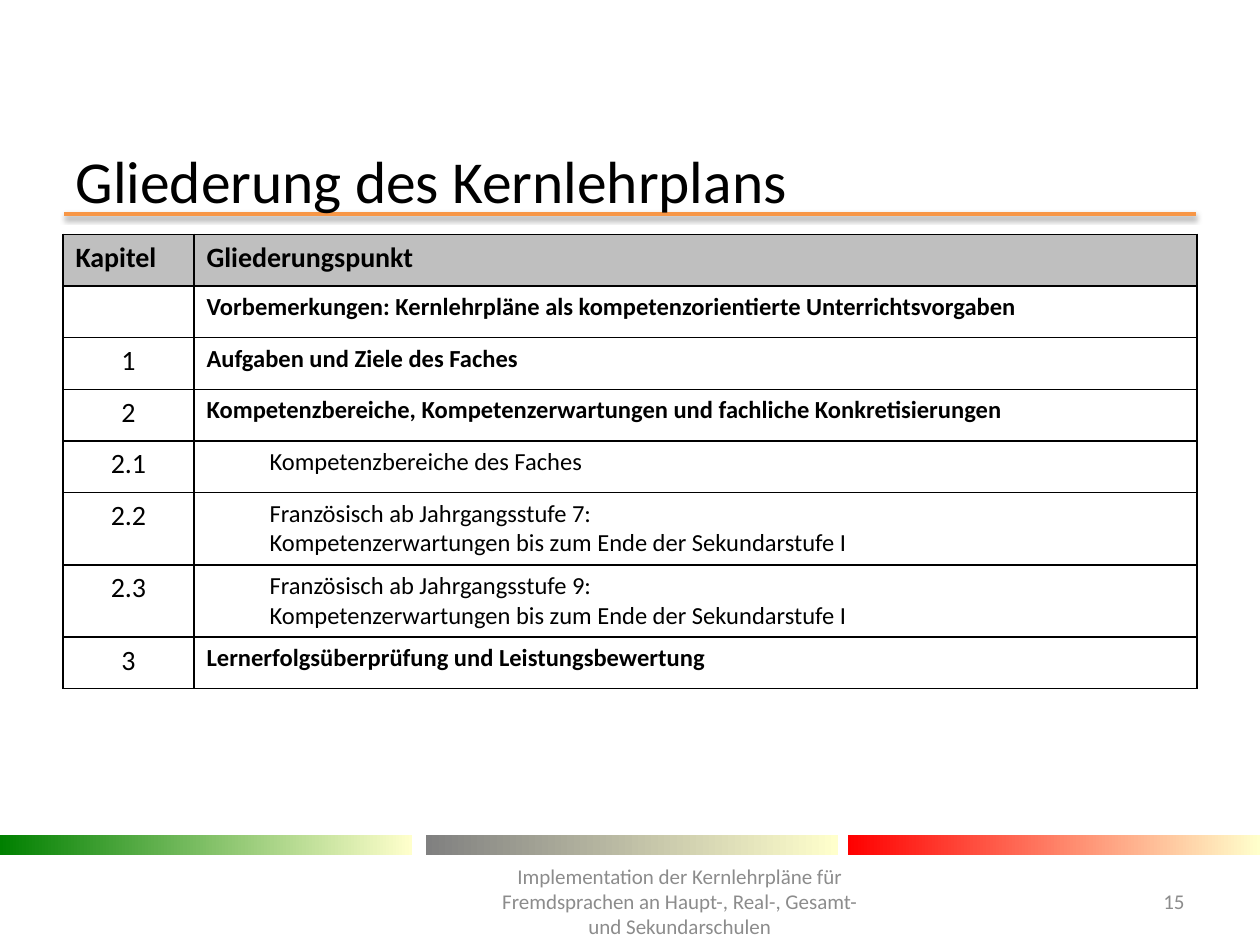
import pptx
import pptx.dml.color
import pptx.enum.shapes
import pptx.enum.text
import pptx.oxml
import pptx.oxml.ns
import pptx.util
from typing import NamedTuple

Inches = pptx.util.Inches
Pt = pptx.util.Pt
ALIGN = pptx.enum.text.PP_ALIGN
MIDDLE = pptx.enum.text.MSO_ANCHOR.MIDDLE
NS = pptx.oxml.ns.nsdecls("a")


class Chapter(NamedTuple):
    number: str
    heading: str
    is_section: bool = False


class Band(NamedTuple):
    left: float
    start: str
    end: str


class FooterText(NamedTuple):
    left: float
    width: float
    text: str
    align: ALIGN


CHAPTERS = [
    Chapter("", "Vorbemerkungen: Kernlehrpläne als kompetenzorientierte Unterrichtsvorgaben"),
    Chapter("1", "Aufgaben und Ziele des Faches"),
    Chapter("2", "Kompetenzbereiche, Kompetenzerwartungen und fachliche Konkretisierungen"),
    Chapter("2.1", "Kompetenzbereiche des Faches", True),
    Chapter("2.2", "Französisch ab Jahrgangsstufe 7:\n"
            "Kompetenzerwartungen bis zum Ende der Sekundarstufe I", True),
    Chapter("2.3", "Französisch ab Jahrgangsstufe 9:\n"
            "Kompetenzerwartungen bis zum Ende der Sekundarstufe I", True),
    Chapter("3", "Lernerfolgsüberprüfung und Leistungsbewertung"),
]
BANDS = [
    Band(0, "008000", "FFFFCC"),
    Band(3.38, "808080", "FFFFCC"),
    Band(6.73, "FF0000", "FFFFCC"),
]
FOOTER = [
    FooterText(8.86, 0.64, "15", ALIGN.RIGHT),
    FooterText(3.82, 3.15, "Implementation der Kernlehrpläne für Fremdsprachen an "
               "Haupt-, Real-, Gesamt- und Sekundarschulen", ALIGN.CENTER),
]


def rgb(value: str) -> pptx.dml.color.RGBColor:
    return pptx.dml.color.RGBColor.from_string(value)


def write(frame, text: str, size: float, color: str = "000000",
          bold: bool = False, align: ALIGN = ALIGN.LEFT) -> None:
    paragraph = frame.paragraphs[0]
    paragraph.text = text
    paragraph.alignment = align
    formats = {"name": "Calibri", "size": Pt(size), "bold": bold}
    for run in paragraph.runs:
        for attribute, value in formats.items():
            setattr(run.font, attribute, value)
        run.font.color.rgb = rgb(color)


def draw_rule(slide) -> None:
    rule = slide.shapes.add_connector(
        pptx.enum.shapes.MSO_CONNECTOR.STRAIGHT,
        Inches(0.51), Inches(1.7), Inches(9.49), Inches(1.7))
    rule.line.color.rgb = rgb("F79646")
    rule.line.width = Pt(2)
    rule.element.spPr.append(pptx.oxml.parse_xml(
        f'<a:effectLst {NS}><a:outerShdw blurRad="{Pt(3.1)}" dist="{Pt(1.6)}" '
        'dir="5400000" rotWithShape="0"><a:srgbClr val="000000">'
        '<a:alpha val="38000"/></a:srgbClr></a:outerShdw></a:effectLst>'))


def draw_band(slide, band: Band) -> None:
    bar = slide.shapes.add_shape(
        pptx.enum.shapes.MSO_SHAPE.RECTANGLE,
        Inches(band.left), Inches(6.63), Inches(3.27), Inches(0.16))
    bar.shadow.inherit = False
    bar.line.fill.background()
    bar.fill.gradient()
    bar.fill.gradient_angle = 0
    for stop, color, position in zip(bar.fill.gradient_stops, band[1:], (0, 1)):
        stop.color.rgb = rgb(color)
        stop.position = position


def format_cell(cell, fill: str = "") -> None:
    properties = cell._tc.get_or_add_tcPr()
    for side in ("lnL", "lnR", "lnT", "lnB"):
        properties.append(pptx.oxml.parse_xml(
            f'<a:{side} {NS} w="{Pt(1)}"><a:solidFill><a:srgbClr val="000000"/>'
            f'</a:solidFill></a:{side}>'))
    if fill:
        cell.fill.solid()
        cell.fill.fore_color.rgb = rgb(fill)
    else:
        cell.fill.background()


def draw_outline(slide, chapters: list[Chapter]) -> None:
    row_count = len(chapters) + 1
    outline = slide.shapes.add_table(
        row_count, 2, Inches(0.5), Inches(1.86),
        Inches(9), Inches(0.41 * row_count)).table
    outline.first_row = outline.horz_banding = False
    for column, width in zip(outline.columns, (1.04, 7.96)):
        column.width = Inches(width)
    for row in outline.rows:
        row.height = Inches(0.41)

    # Header row
    for column, label in enumerate(("Kapitel", "Gliederungspunkt")):
        header = outline.cell(0, column)
        format_cell(header, "BFBFBF")
        write(header.text_frame, label, 16, bold=True)

    # Chapter rows, sections indented
    for row, chapter in enumerate(chapters, start=1):
        number, heading = outline.cell(row, 0), outline.cell(row, 1)
        format_cell(number)
        format_cell(heading)
        write(number.text_frame, chapter.number, 16, align=ALIGN.CENTER)
        write(heading.text_frame, chapter.heading, 14, bold=not chapter.is_section)
        if chapter.is_section:
            paragraph = heading.text_frame.paragraphs[0]
            paragraph.level = 1
            indent = paragraph._p.get_or_add_pPr()
            indent.set("marL", str(Inches(0.5)))
            indent.set("indent", "0")


def draw_title(slide, text: str) -> None:
    title = slide.shapes.title
    place = {"left": 0.5, "top": 1.23, "width": 9, "height": 0.39}
    for attribute, value in place.items():
        setattr(title, attribute, Inches(value))
    title.text_frame.vertical_anchor = MIDDLE
    title.text_frame.auto_size = pptx.enum.text.MSO_AUTO_SIZE.NONE
    write(title.text_frame, text, 34)
    # Bring the title in front of the rule
    slide.shapes.element.append(title.element)


def draw_footer(slide, footer: FooterText) -> None:
    box = slide.shapes.add_textbox(
        Inches(footer.left), Inches(6.95), Inches(footer.width), Inches(0.4))
    box.text_frame.word_wrap = True
    box.text_frame.vertical_anchor = MIDDLE
    write(box.text_frame, footer.text, 12, "8C8C8C", align=footer.align)


def main() -> None:
    deck = pptx.Presentation()
    deck.slide_width, deck.slide_height = Inches(10), Inches(7.5)
    slide = deck.slides.add_slide(deck.slide_layouts[5])

    # Decoration
    draw_rule(slide)
    for band in BANDS:
        draw_band(slide, band)

    # Content
    draw_title(slide, "Gliederung des Kernlehrplans")
    draw_outline(slide, CHAPTERS)
    for footer in FOOTER:
        draw_footer(slide, footer)

    deck.save("out.pptx")


if __name__ == "__main__":
    main()
